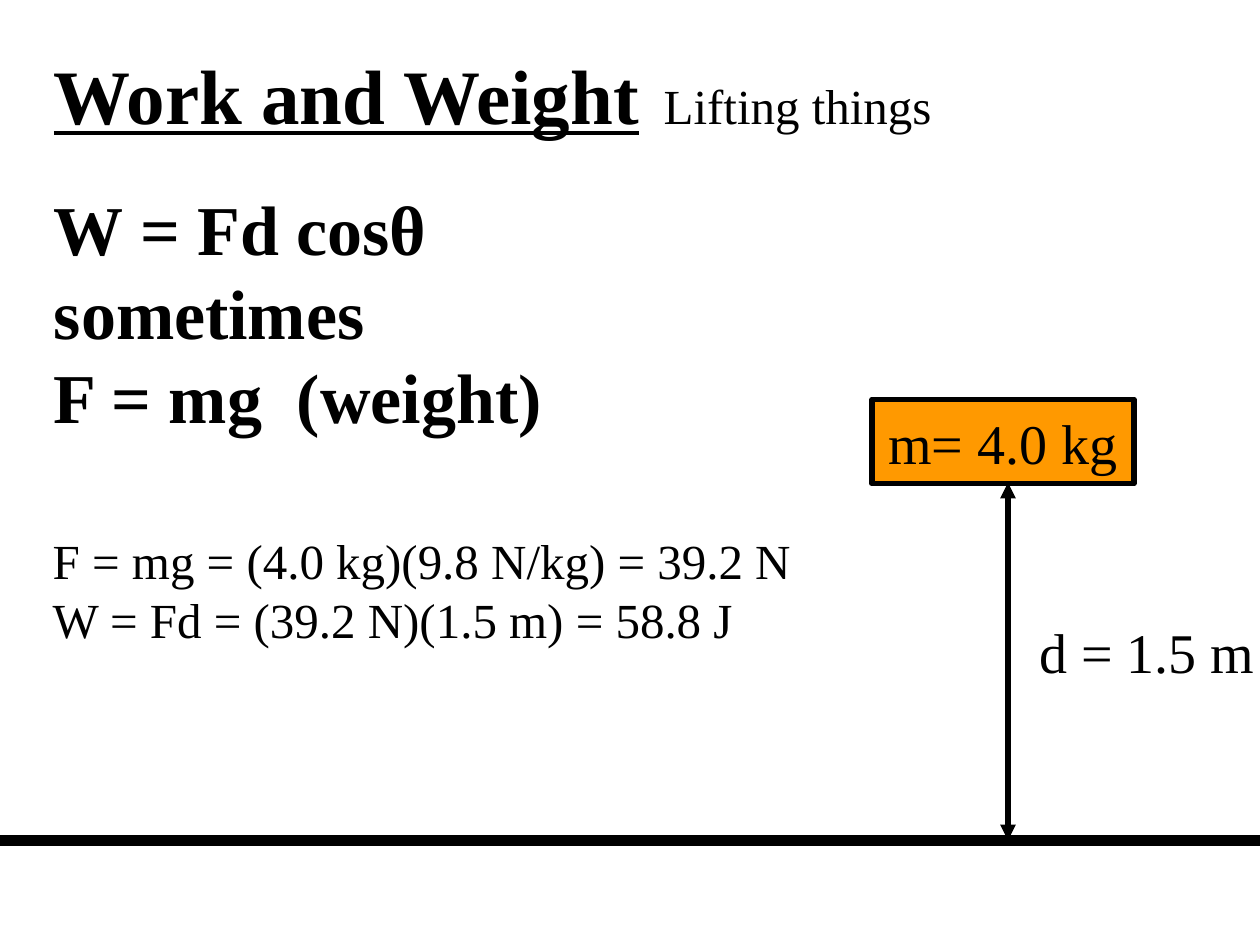
from lxml import etree
from pptx import Presentation
from pptx.dml.color import RGBColor
from pptx.enum.shapes import MSO_CONNECTOR, MSO_SHAPE
from pptx.enum.text import MSO_ANCHOR, MSO_AUTO_SIZE, PP_ALIGN
from pptx.oxml.ns import qn
from pptx.util import Inches, Pt

COLORS = {"ink": "000000", "block": "FF9900"}
FONT = "Times New Roman"


def rgb(name):
    return RGBColor.from_string(COLORS[name])


def add_run(p, text, size=28, bold=False, underline=False):
    r = p.add_run()
    r.text = text
    r.font.name = FONT
    r.font.size = Pt(size)
    r.font.bold = bold
    r.font.underline = underline
    r.font.color.rgb = rgb("ink")
    return r


class SlideBuilder:
    """Holds the style and the current slide."""

    def __init__(self, prs):
        self.s = prs.slides.add_slide(prs.slide_layouts[6])

    def text(self, box, paragraphs, wrap=True):
        """Each paragraph is a list of (text, format) runs."""
        sp = self.s.shapes.add_textbox(*map(Inches, box))
        tf = sp.text_frame
        tf.word_wrap = wrap
        tf.auto_size = MSO_AUTO_SIZE.SHAPE_TO_FIT_TEXT
        for i, runs in enumerate(paragraphs):
            p = tf.add_paragraph() if i else tf.paragraphs[0]
            for text, fmt in runs:
                add_run(p, text, **fmt)
        return sp

    def block(self, box, label, size):
        sp = self.s.shapes.add_shape(MSO_SHAPE.RECTANGLE, *map(Inches, box))
        sp.shadow.inherit = False
        sp.fill.solid()
        sp.fill.fore_color.rgb = rgb("block")
        sp.line.color.rgb = rgb("ink")
        sp.line.width = Pt(3)
        tf = sp.text_frame
        tf.word_wrap = False
        tf.vertical_anchor = MSO_ANCHOR.MIDDLE
        p = tf.paragraphs[0]
        p.alignment = PP_ALIGN.CENTER
        add_run(p, label, size=size)
        return sp

    def line(self, start, end, width, arrows=False):
        sp = self.s.shapes.add_connector(
            MSO_CONNECTOR.STRAIGHT, *map(Inches, (*start, *end)))
        sp.line.color.rgb = rgb("ink")
        sp.line.width = Pt(width)
        if arrows:
            ln = sp.line._get_or_add_ln()
            for tag in ("a:headEnd", "a:tailEnd"):
                etree.SubElement(ln, qn(tag), type="triangle")
        etree.SubElement(sp._element.spPr, qn("a:effectLst"))
        return sp


def main():
    prs = Presentation()
    prs.slide_width, prs.slide_height = Inches(10), Inches(7.5)
    slide = SlideBuilder(prs)

    # Title and formulas
    slide.text((0.33, 0.33, 9.08, 1.37), [[
        ("Work and Weight", dict(size=44, bold=True, underline=True)),
        ("  Lifting things", dict(size=28))]])
    formulas = ("W = Fd cosθ", "sometimes", "F = mg  (weight)")
    slide.text((0.33, 1.42, 9.33, 2.57),
               [[(f, dict(size=40, bold=True))] for f in formulas])

    # Ground, lifted block and height
    ground = 6.67
    slide.line((0, ground), (10, ground), 6)
    slide.block((6.92, 3.17, 2.08, 0.67), "m= 4.0 kg", 32)
    slide.line((8, 3.83), (8, ground), 3, arrows=True)
    slide.text((8.15, 4.85, 1.91, 0.63),
               [[("d = 1.5 m", dict(size=32))]], wrap=False)

    # Worked example
    steps = ("F = mg = (4.0 kg)(9.8 N/kg) = 39.2 N",
             "W = Fd = (39.2 N)(1.5 m) = 58.8 J")
    slide.text((0.32, 4.16, 6.07, 1.03),
               [[(step, dict(size=28))] for step in steps], wrap=False)

    prs.save("out.pptx")


if __name__ == "__main__":
    main()
